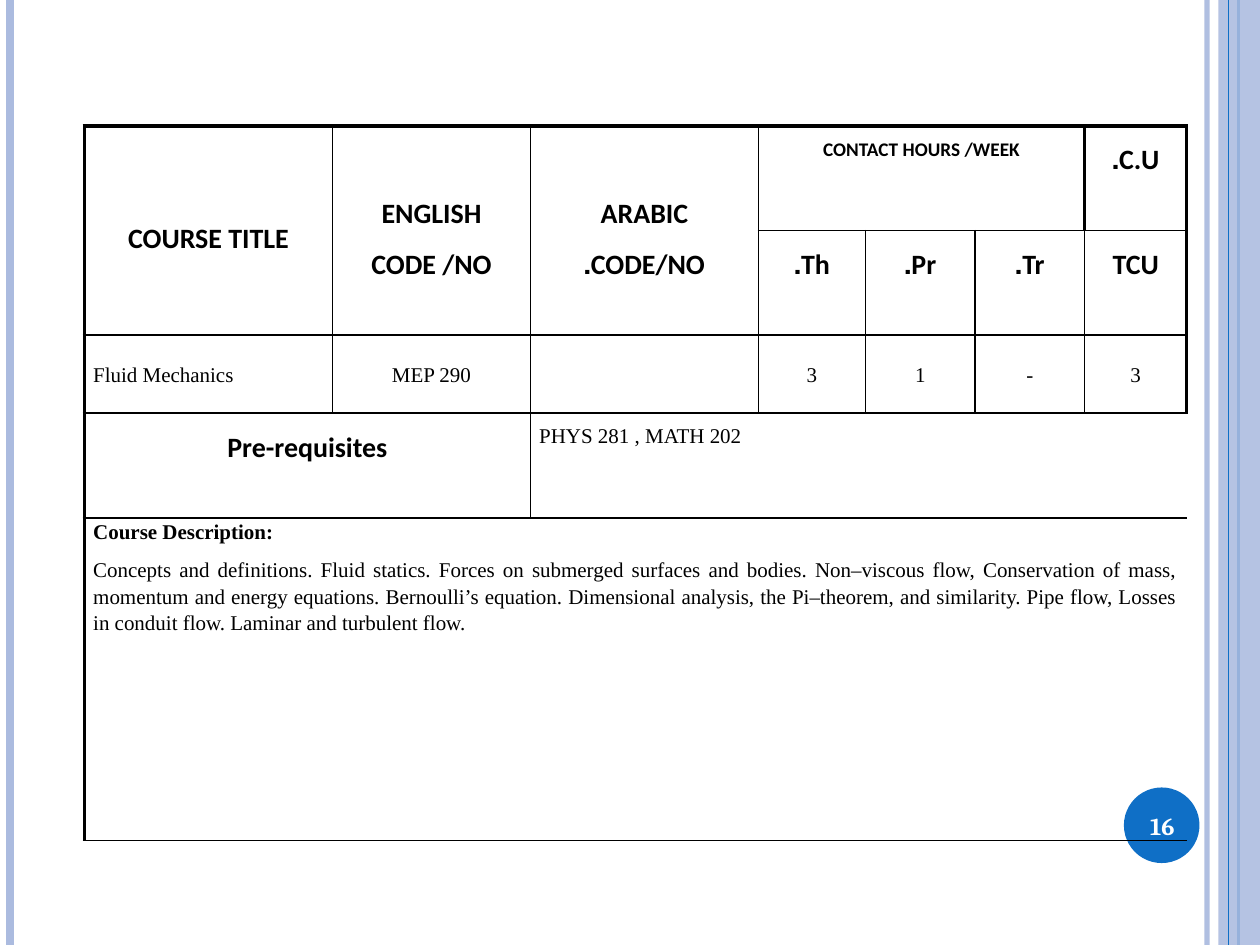
from lxml import etree
from pptx import Presentation, util as u
from pptx.dml.color import RGBColor
from pptx.enum import shapes, text
from pptx.oxml.ns import qn

# Content
HEAD, SMALL_HEAD, BODY, CENTRED, TITLE = "head", "small_head", "body", "centred", "title"
PARAGRAPH, PREREQ = "paragraph", "prereq"
# row, column, row span, column span, vertically centred, [(style, text)]
CELLS = [
    (0, 0, 2, 1, True, [(HEAD, "COURSE TITLE")]),
    (0, 1, 2, 1, True, [(HEAD, "ENGLISH CODE /NO")]),
    (0, 2, 2, 1, True, [(HEAD, "ARABIC CODE/NO.")]),
    (0, 3, 1, 3, False, [(SMALL_HEAD, "CONTACT HOURS /WEEK")]),
    (0, 6, 1, 1, False, [(HEAD, "C.U.")]),
    (1, 3, 1, 1, False, [(HEAD, "Th.")]),
    (1, 4, 1, 1, False, [(HEAD, "Pr.")]),
    (1, 5, 1, 1, False, [(HEAD, "Tr.")]),
    (1, 6, 1, 1, False, [(HEAD, "TCU")]),
    (2, 0, 1, 1, True, [(BODY, "Fluid Mechanics")]),
    (2, 1, 1, 1, True, [(CENTRED, "MEP 290")]),
    (2, 2, 1, 1, True, []),
    (2, 3, 1, 1, True, [(CENTRED, "3")]),
    (2, 4, 1, 1, True, [(CENTRED, "1")]),
    (2, 5, 1, 1, True, [(CENTRED, "-")]),
    (2, 6, 1, 1, True, [(CENTRED, "3")]),
    (3, 0, 1, 2, False, [(HEAD, "Pre-requisites")]),
    (3, 2, 1, 5, False, [(PREREQ, "PHYS 281 , MATH 202")]),
    (4, 0, 1, 7, False, [
        (TITLE, "Course Description: "),
        (PARAGRAPH, "Concepts and definitions. Fluid statics. Forces on submerged surfaces "
                    "and bodies. Non–viscous flow, Conservation of mass, momentum and energy "
                    "equations. Bernoulli’s equation. Dimensional analysis, the Pi–theorem, and "
                    "similarity. Pipe flow, Losses in conduit flow. Laminar and turbulent flow."),
    ]),
]
PAGE_NUMBER = "16"

# Layout, in inches
WIDTH, HEIGHT = 10, 7.5
TABLE_LEFT, TABLE_TOP = 0.67, 1
COLUMNS = [1.97, 1.57, 1.81, 0.85, 0.87, 0.87, 0.81]
ROWS = [0.83, 0.83, 0.62, 0.83, 2.56]
CELL_INSET = 0.07

# Theme
THEME = {
    "pale": "ABBBDF", "blue": "0F6FC6", "ink": "000000", "white": "FFFFFF",
    "thick": 2.25, "thin": 1,
    "number": ("Cambria", 14),
    "plain_table": "{2D5ABB26-0587-4C30-8999-92F81FD0307C}",
}
LEFT, CENTER, JUSTIFY = text.PP_ALIGN.LEFT, text.PP_ALIGN.CENTER, text.PP_ALIGN.JUSTIFY
# font, size, bold, alignment, right to left, line spacing, space before, space after
STYLES = {
    HEAD: ("Calibri", 16, True, CENTER, True, 1.5, 0, 10),
    SMALL_HEAD: ("Calibri", 11, True, CENTER, True, 1.5, 0, 10),
    BODY: ("Times New Roman", 12, False, LEFT, False, 1.15, 6, 6),
    CENTRED: ("Times New Roman", 12, False, CENTER, False, 1.15, 6, 6),
    PREREQ: ("Times New Roman", 12, False, LEFT, True, 1.5, 0, 10),
    TITLE: ("Times New Roman", 12, True, JUSTIFY, False, 1.15, 6, 0),
    PARAGRAPH: ("Times New Roman", 12, False, JUSTIFY, False, 1.15, 6, 0),
}


def color(name):
    return RGBColor.from_string(THEME[name])


def set_alpha(parent, percent):
    for tone in parent.iter(qn("a:srgbClr")):
        etree.SubElement(tone, qn("a:alpha"), val=str(percent * 1000))


def add_rule(page, x, name, width, alpha=100):
    rule = page.shapes.add_connector(shapes.MSO_CONNECTOR.STRAIGHT,
                                     u.Inches(x), 0, u.Inches(x), u.Inches(HEIGHT))
    rule.line.color.rgb = color(name)
    rule.line.width = u.Pt(width)
    properties = rule._element.spPr
    if alpha < 100:
        set_alpha(properties, alpha)
    etree.SubElement(properties, qn("a:effectLst"))


def add_plain_shape(page, kind, box, name, alpha=100):
    shape = page.shapes.add_shape(kind, *map(u.Inches, box))
    shape.shadow.inherit = False
    shape.fill.solid()
    shape.fill.fore_color.rgb = color(name)
    shape.line.fill.background()
    if alpha < 100:
        set_alpha(shape._element.spPr, alpha)


def set_font(para, font, size, bold, name):
    for span in para.runs:
        span.font.name, span.font.size, span.font.bold = font, u.Pt(size), bold
        span.font.color.rgb = color(name)


def format_para(para, style):
    font, size, bold, align, rtl, spacing, before, after = STYLES[style]
    para.alignment, para.line_spacing = align, spacing
    para.space_before, para.space_after = u.Pt(before), u.Pt(after)
    if rtl:
        para._p.get_or_add_pPr().set("rtl", "1")
    set_font(para, font, size, bold, "ink")


def add_border(cell, side, width):
    line = etree.SubElement(cell._tc.get_or_add_tcPr(), qn("a:ln" + side),
                            w=str(u.Pt(width)))
    fill = etree.SubElement(line, qn("a:solidFill"))
    etree.SubElement(fill, qn("a:srgbClr"), val=THEME["ink"])


def add_borders(table, row, column, row_span, column_span):
    """Draw the edges of a span: thick outside and beside C.U., thin elsewhere."""
    last_row, last_column = row + row_span - 1, column + column_span - 1
    for r in range(row, last_row + 1):
        for c in range(column, last_column + 1):
            edges = [
                ("L", c == column, c == 0 or (r, c) == (0, 6)),
                ("R", c == last_column, c == len(COLUMNS) - 1 or (r, c) == (0, 5)),
                ("T", r == row, r == 0),
                ("B", r == last_row, False),
            ]
            for side, on_edge, thick in edges:
                if on_edge:
                    add_border(table.cell(r, c), side, THEME["thick" if thick else "thin"])
            table.cell(r, c).fill.background()


def add_course_table(page):
    box = (TABLE_LEFT, TABLE_TOP, sum(COLUMNS), sum(ROWS))
    table = page.shapes.add_table(len(ROWS), len(COLUMNS), *map(u.Inches, box)).table
    table.first_row = table.horz_banding = False
    table._tbl.tblPr.find(qn("a:tableStyleId")).text = THEME["plain_table"]
    for column, width in zip(table.columns, COLUMNS):
        column.width = u.Inches(width)
    for row, height in zip(table.rows, ROWS):
        row.height = u.Inches(height)

    for row, column, row_span, column_span, middle, paras in CELLS:
        cell = table.cell(row, column)
        if row_span * column_span > 1:
            cell.merge(table.cell(row + row_span - 1, column + column_span - 1))
        cell.margin_left = cell.margin_right = u.Inches(CELL_INSET)
        cell.margin_top = cell.margin_bottom = 0
        cell.vertical_anchor = text.MSO_ANCHOR.MIDDLE if middle else text.MSO_ANCHOR.TOP
        cell.text_frame.text = "\n".join(words for _, words in paras)
        for para, (style, _) in zip(cell.text_frame.paragraphs, paras):
            format_para(para, style)
        add_borders(table, row, column, row_span, column_span)


def add_page_number(page):
    box = page.shapes.add_textbox(*map(u.Inches, (8.89, 6.27, 0.67, 0.57)))
    frame = box.text_frame
    frame.word_wrap = True
    frame.vertical_anchor = text.MSO_ANCHOR.MIDDLE
    frame.text = PAGE_NUMBER
    para = frame.paragraphs[0]
    para.alignment = CENTER
    set_font(para, *THEME["number"], True, "white")


def main():
    deck = Presentation()
    deck.slide_width, deck.slide_height = u.Inches(WIDTH), u.Inches(HEIGHT)
    page = deck.slides.add_slide(deck.slide_layouts[6])

    # Side bands and number disc
    add_rule(page, 9.58, "pale", 3, alpha=93)
    add_rule(page, 0.08, "pale", 4.5)
    add_rule(page, 9.83, "blue", 1.5)
    add_plain_shape(page, shapes.MSO_SHAPE.RECTANGLE, (9.67, 0, 0.33, HEIGHT), "pale", alpha=87)
    add_rule(page, 9.75, "blue", 0.75)
    add_plain_shape(page, shapes.MSO_SHAPE.OVAL, (8.92, 6.25, 0.6, 0.6), "blue")

    # Course details
    add_course_table(page)
    add_page_number(page)
    deck.save("out.pptx")


if __name__ == "__main__":
    main()
